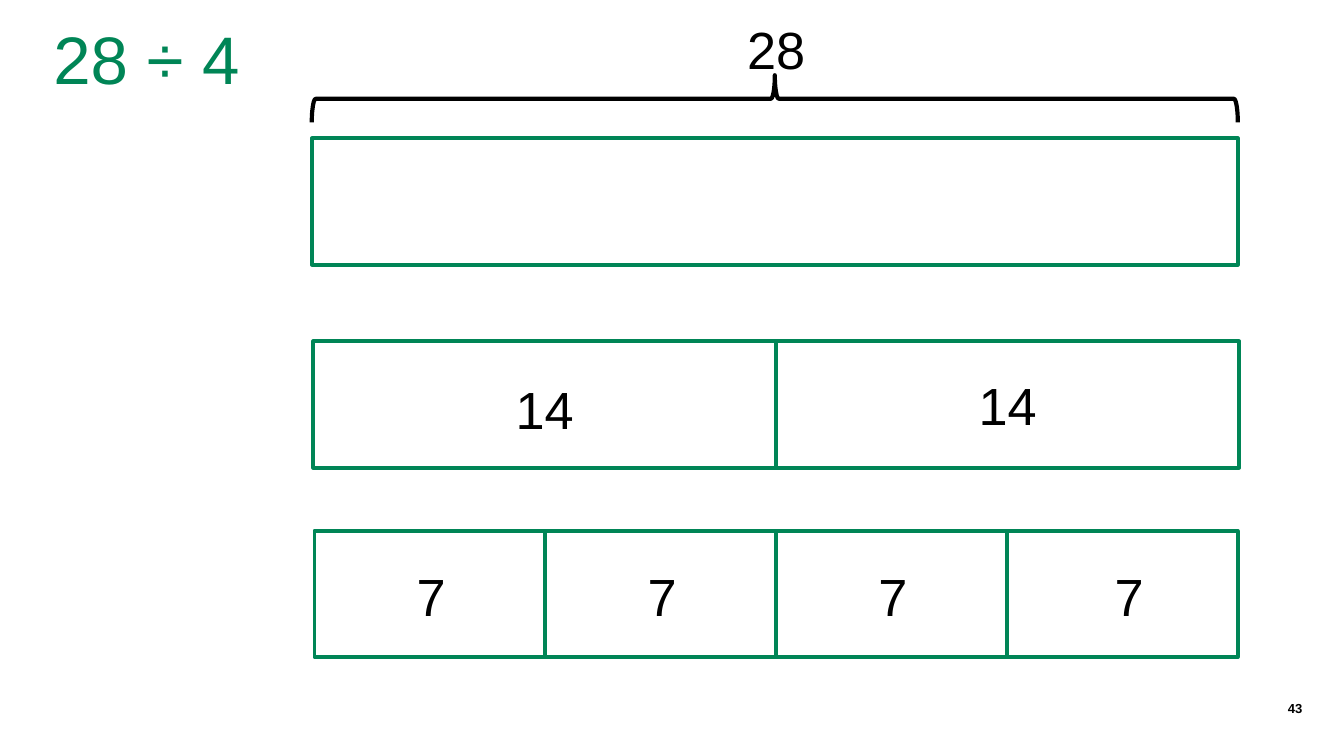
from pptx import Presentation
from pptx.dml.color import RGBColor
from pptx.enum.shapes import MSO_SHAPE
from pptx.enum.text import MSO_ANCHOR, PP_ALIGN
from pptx.util import Inches, Pt

GREEN = RGBColor(0x00, 0x85, 0x56)
BLACK = RGBColor(0x00, 0x00, 0x00)
WHITE = RGBColor(0xFF, 0xFF, 0xFF)
BAR_HEIGHT = 0.94
LABEL_WIDTH, LABEL_HEIGHT = 0.6, 0.47


def place(sp, left, top, width, height):
    sp.left, sp.top = Inches(left), Inches(top)
    sp.width, sp.height = Inches(width), Inches(height)


def write(sp, text, size, color=BLACK, bold=False, align=PP_ALIGN.CENTER):
    tf = sp.text_frame
    tf.word_wrap = True
    tf.vertical_anchor = MSO_ANCHOR.TOP
    tf.margin_left = tf.margin_right = tf.margin_top = tf.margin_bottom = 0
    p = tf.paragraphs[0]
    p.text = text
    p.alignment = align
    p.line_spacing = 1.0
    p.font.name = "Arial"
    p.font.size = Pt(size)
    p.font.bold = bold
    p.font.color.rgb = color


def add_text(s, box, text, size, **style):
    sp = s.shapes.add_textbox(*map(Inches, box))
    write(sp, text, size, **style)


def add_title(s, box, text):
    place(s.shapes.title, *box)
    write(s.shapes.title, text, 36, color=GREEN)


def add_bar(s, left, top, width, parts):
    """Split a bar into equal parts; each part is its label and the label's offset."""
    part_width = width / len(parts)
    for i, (label, dx, dy) in enumerate(parts):
        x = left + i * part_width
        sp = s.shapes.add_shape(MSO_SHAPE.RECTANGLE, Inches(x), Inches(top),
                                Inches(part_width), Inches(BAR_HEIGHT))
        sp.shadow.inherit = False
        sp.fill.solid()
        sp.fill.fore_color.rgb = WHITE
        sp.line.color.rgb = GREEN
        sp.line.width = Pt(2)
        if label:
            label_left = x + (part_width - LABEL_WIDTH) / 2 + dx
            add_text(s, (label_left, top + 0.25 + dy, LABEL_WIDTH, LABEL_HEIGHT),
                     label, 28)


def add_total(s, left, top, width, height, label):
    """Draw a brace pointing up at the total, which stands above the box."""
    sp = s.shapes.add_shape(MSO_SHAPE.LEFT_BRACE, 0, 0, 0, 0)
    place(sp, left + (width - height) / 2, top + (height - width) / 2, height, width)
    sp.rotation = 90
    sp.shadow.inherit = False
    sp.fill.background()
    sp.line.color.rgb = BLACK
    sp.line.width = Pt(2.25)
    add_text(s, (left + (width - LABEL_WIDTH) / 2 + 0.01, top - 0.43,
                 LABEL_WIDTH, LABEL_HEIGHT), label, 28)


def main():
    prs = Presentation()
    prs.slide_width = Inches(10)
    prs.slide_height = prs.slide_width * 9 // 16
    s = prs.slides.add_slide(prs.slide_layouts[5])
    add_title(s, (0.15, 0.13, 1.88, 0.61), "28 ÷ 4")
    add_total(s, 2.32, 0.56, 6.89, 0.35, "28")
    add_bar(s, 2.32, 1.03, 6.89, [("", 0, 0)])
    add_bar(s, 2.33, 2.54, 6.89, [("14", 0, 0.02), ("14", 0, -0.01)])
    add_bar(s, 2.34, 3.95, 6.87, [("7", 0.01, 0)] * 3 + [("7", 0.05, 0)])
    add_text(s, (8.7, 5.21, 0.99, 0.3), "43", 7, bold=True, align=PP_ALIGN.RIGHT)
    prs.save("out.pptx")


if __name__ == "__main__":
    main()
